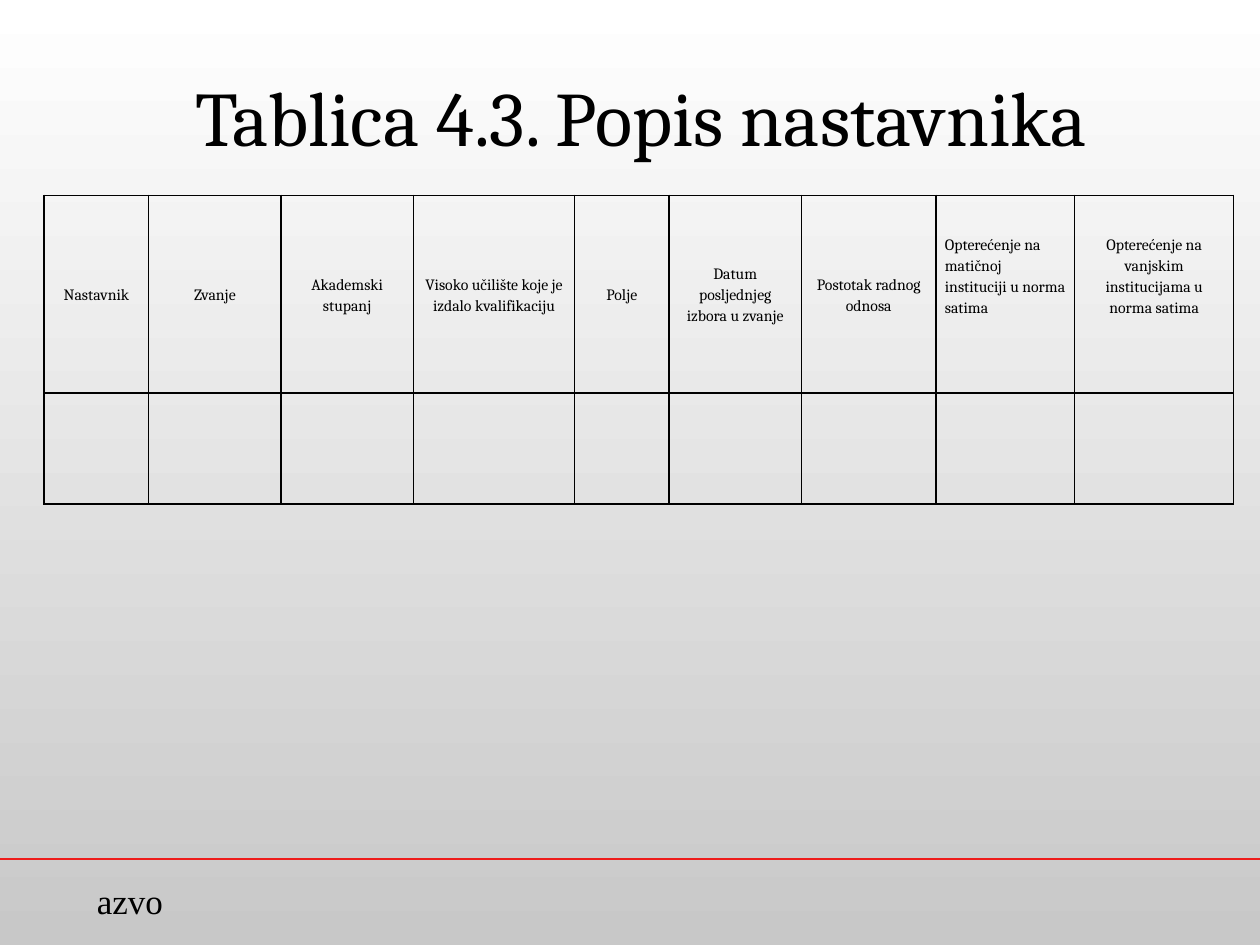
from dataclasses import dataclass

from lxml.etree import SubElement
from pptx import Presentation
from pptx.dml.color import RGBColor
from pptx.enum.shapes import MSO_CONNECTOR
from pptx.enum.text import MSO_ANCHOR, PP_ALIGN
from pptx.oxml.ns import qn
from pptx.slide import Slide
from pptx.table import _Cell
from pptx.util import Inches, Pt

BLACK = RGBColor(0x00, 0x00, 0x00)
RED = RGBColor(0xEE, 0x1C, 0x1B)
WHITE = RGBColor(0xFF, 0xFF, 0xFF)
GRAY = RGBColor(0xC8, 0xC8, 0xC8)
ROW_HEIGHTS = (1.57, 0.88)


@dataclass
class Column:
    heading: str
    width: float
    align: PP_ALIGN = PP_ALIGN.CENTER
    anchor: MSO_ANCHOR = MSO_ANCHOR.MIDDLE
    top: float = 0


@dataclass
class Label:
    text: str
    left: float
    top: float
    width: float
    height: float
    font: str
    size: int
    align: PP_ALIGN
    anchor: MSO_ANCHOR


COLUMNS = (
    Column("Nastavnik", 0.83),
    Column("Zvanje", 1.05),
    Column("Akademski stupanj", 1.05),
    Column("Visoko učilište koje je izdalo kvalifikaciju", 1.28),
    Column("Polje", 0.75),
    Column("Datum posljednjeg izbora u zvanje", 1.05),
    Column("Postotak radnog odnosa", 1.07),
    Column("Opterećenje na matičnoj instituciji u norma satima", 1.1,
           PP_ALIGN.LEFT, MSO_ANCHOR.TOP, 0.3),
    Column("Opterećenje na vanjskim institucijama u norma satima", 1.26,
           anchor=MSO_ANCHOR.TOP, top=0.3),
)
LABELS = (
    Label("azvo", 0.67, 6.93, 0.87, 0.43, "Times New Roman", 20,
          PP_ALIGN.LEFT, MSO_ANCHOR.TOP),
    Label("Tablica 4.3. Popis nastavnika", 0.59, 0.29, 9, 1.25, "Cambria", 44,
          PP_ALIGN.CENTER, MSO_ANCHOR.MIDDLE),
)


def apply_format(target: object, values: dict) -> None:
    for name, value in values.items():
        setattr(target, name, value)


def write_text(para, text: str, font: str, size: int) -> None:
    span = para.add_run()
    span.text = text
    apply_format(span.font, {"name": font, "size": Pt(size)})
    span.font.color.rgb = BLACK


def draw_background(page: Slide) -> None:
    fill = page.background.fill
    fill.gradient()
    fill.gradient_angle = 270
    for stop, color, position in zip(fill.gradient_stops, (WHITE, GRAY), (0, 1)):
        stop.color.rgb = color
        stop.position = position


def draw_rule(page: Slide) -> None:
    rule = page.shapes.add_connector(
        MSO_CONNECTOR.STRAIGHT, Inches(0), Inches(6.82), Inches(10), Inches(6.82))
    rule.line.color.rgb = RED
    rule.line.width = Pt(1)
    SubElement(rule._element.spPr, qn("a:effectLst"))


def draw_label(page: Slide, label: Label) -> None:
    box = page.shapes.add_textbox(
        Inches(label.left), Inches(label.top),
        Inches(label.width), Inches(label.height))
    frame = box.text_frame
    apply_format(frame, {"word_wrap": True, "vertical_anchor": label.anchor})
    para = frame.paragraphs[0]
    para.alignment = label.align
    write_text(para, label.text, label.font, label.size)


def draw_borders(cell: _Cell) -> None:
    properties = cell._tc.get_or_add_tcPr()
    for side in ("lnL", "lnR", "lnT", "lnB"):
        border = SubElement(properties, qn(f"a:{side}"), w=str(Pt(1)))
        fill = SubElement(border, qn("a:solidFill"))
        SubElement(fill, qn("a:srgbClr"), val=str(BLACK))


def format_cell(cell: _Cell, column: Column) -> None:
    draw_borders(cell)
    cell.fill.background()
    apply_format(cell, {
        "vertical_anchor": column.anchor,
        "margin_left": Inches(0.07),
        "margin_right": Inches(0.07),
        "margin_top": Inches(column.top),
        "margin_bottom": Inches(0),
    })
    para = cell.text_frame.paragraphs[0]
    apply_format(para, {
        "alignment": column.align,
        "line_spacing": 1.15,
        "space_after": Pt(10),
    })


def draw_table(page: Slide) -> None:
    width = sum(column.width for column in COLUMNS)
    table = page.shapes.add_table(
        len(ROW_HEIGHTS), len(COLUMNS), Inches(0.35), Inches(1.55),
        Inches(width), Inches(sum(ROW_HEIGHTS))).table
    apply_format(table, {"first_row": False, "horz_banding": False})
    for row, height in zip(table.rows, ROW_HEIGHTS):
        row.height = Inches(height)
    for index, column in enumerate(COLUMNS):
        table.columns[index].width = Inches(column.width)
        for row in table.rows:
            format_cell(row.cells[index], column)
        heading = table.cell(0, index).text_frame.paragraphs[0]
        write_text(heading, column.heading, "Cambria", 9)


def main() -> None:
    deck = Presentation()
    apply_format(deck, {"slide_width": Inches(10), "slide_height": Inches(7.5)})
    page = deck.slides.add_slide(deck.slide_layouts[6])
    draw_background(page)
    draw_rule(page)
    for label in LABELS:
        draw_label(page, label)
    draw_table(page)
    deck.save("out.pptx")


if __name__ == "__main__":
    main()
